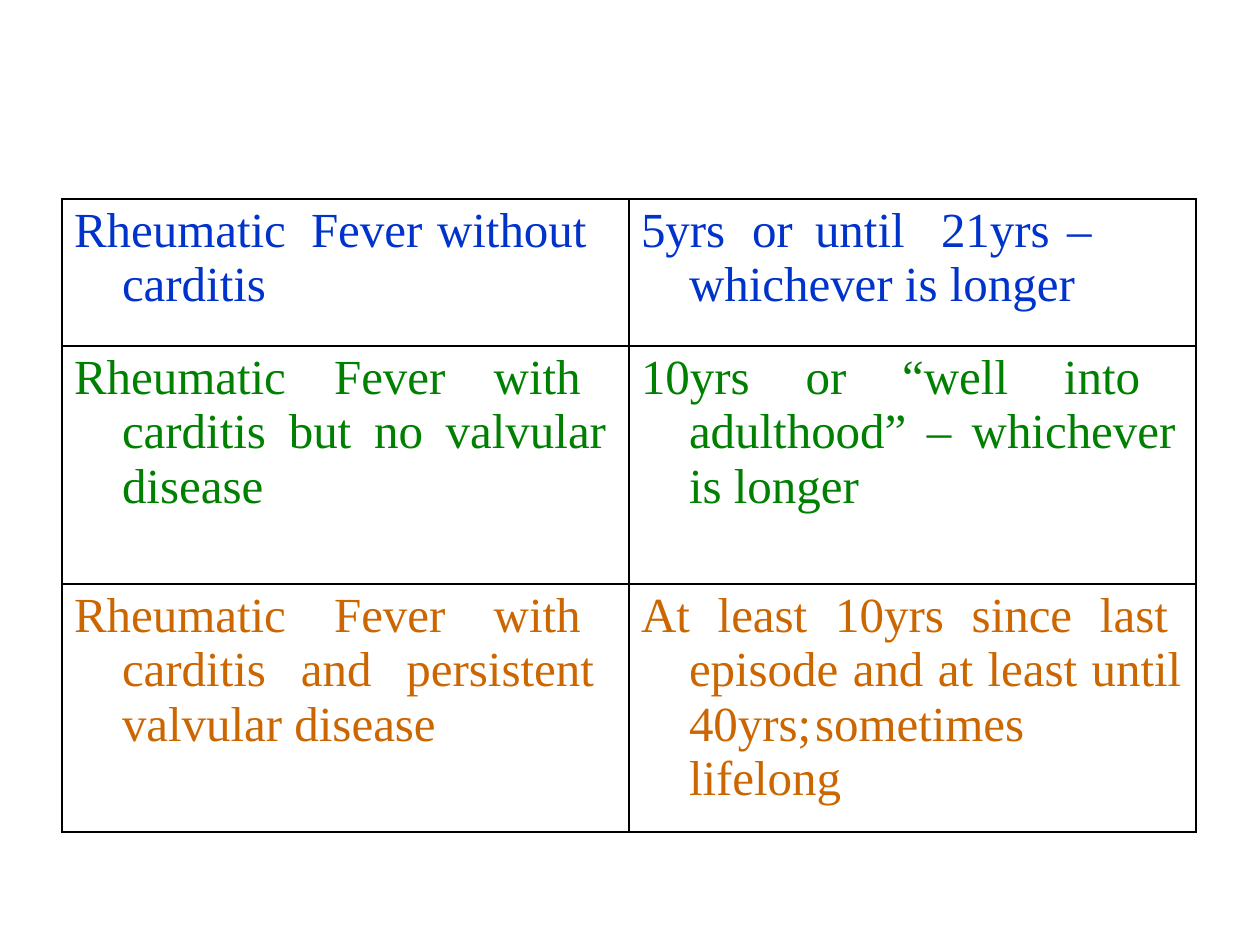
from dataclasses import dataclass

from lxml import etree
from pptx import Presentation
from pptx.dml.color import RGBColor
from pptx.enum.text import PP_ALIGN
from pptx.oxml.ns import qn
from pptx.util import Emu, Pt

LEFT, JUSTIFY = PP_ALIGN.LEFT, PP_ALIGN.JUSTIFY
EMU_PER_PX = 914400 / 126


@dataclass(frozen=True)
class Theme:
    font: str = "Times New Roman"
    text_size: float = 28
    space_before: float = 2.5
    border: str = "000000"
    border_width: float = 1
    short_term: str = "0033CC"
    medium_term: str = "008000"
    long_term: str = "CC6600"


THEME = Theme()

# condition, duration of prophylaxis, colour, alignment, row height in px
DURATIONS = [
    ("Rheumatic\tFever\twithout  carditis",
     "5yrs\tor\tuntil\t21yrs\t–  whichever is longer",
     THEME.short_term, LEFT, 147),
    ("Rheumatic Fever with  carditis but no valvular  disease",
     "10yrs or “well into  adulthood” – whichever  is longer",
     THEME.medium_term, JUSTIFY, 238),
    ("Rheumatic Fever with  carditis and persistent  valvular disease",
     "At least 10yrs since last  episode and at least until  "
     "40yrs;\tsometimes  lifelong",
     THEME.long_term, JUSTIFY, 248),
]


def px(length):
    return Emu(round(length * EMU_PER_PX))


def set_borders(cell):
    properties = cell._tc.get_or_add_tcPr()
    for side in ("lnL", "lnR", "lnT", "lnB"):
        line = etree.SubElement(properties, qn(f"a:{side}"),
                                w=str(Pt(THEME.border_width)))
        fill = etree.SubElement(line, qn("a:solidFill"))
        etree.SubElement(fill, qn("a:srgbClr"), val=THEME.border)


def fill_cell(cell, text, color, alignment):
    """Write one hanging-indent paragraph in a bordered, unfilled cell."""
    set_borders(cell)
    cell.fill.background()
    cell.margin_left = cell.margin_right = cell.margin_bottom = 0
    cell.margin_top = px(5)
    para = cell.text_frame.paragraphs[0]
    para.text = text
    para.alignment = alignment
    para.line_spacing = 1.0
    para.space_before = Pt(THEME.space_before)
    para.font.name = THEME.font
    para.font.size = Pt(THEME.text_size)
    para.font.color.rgb = RGBColor.from_string(color)
    indents = para._p.get_or_add_pPr()
    indents.set("marL", str(px(60)))
    indents.set("indent", str(px(-48)))


def add_duration_table(page, left, top, width):
    height = sum(row[-1] for row in DURATIONS)
    frame = page.shapes.add_table(len(DURATIONS), 2, px(left), px(top),
                                  px(width), px(height))
    table = frame.table
    table.first_row = table.horz_banding = False
    for column in table.columns:
        column.width = px(width / 2)
    for row, (condition, duration, color, alignment, row_height) in zip(
            table.rows, DURATIONS):
        row.height = px(row_height)
        for cell, text in zip(row.cells, (condition, duration)):
            fill_cell(cell, text, color, alignment)


def main():
    deck = Presentation()
    deck.slide_width, deck.slide_height = px(1260), px(945)
    page = deck.slides.add_slide(deck.slide_layouts[6])
    add_duration_table(page, 62, 199, 1134)
    deck.save("out.pptx")


if __name__ == "__main__":
    main()
